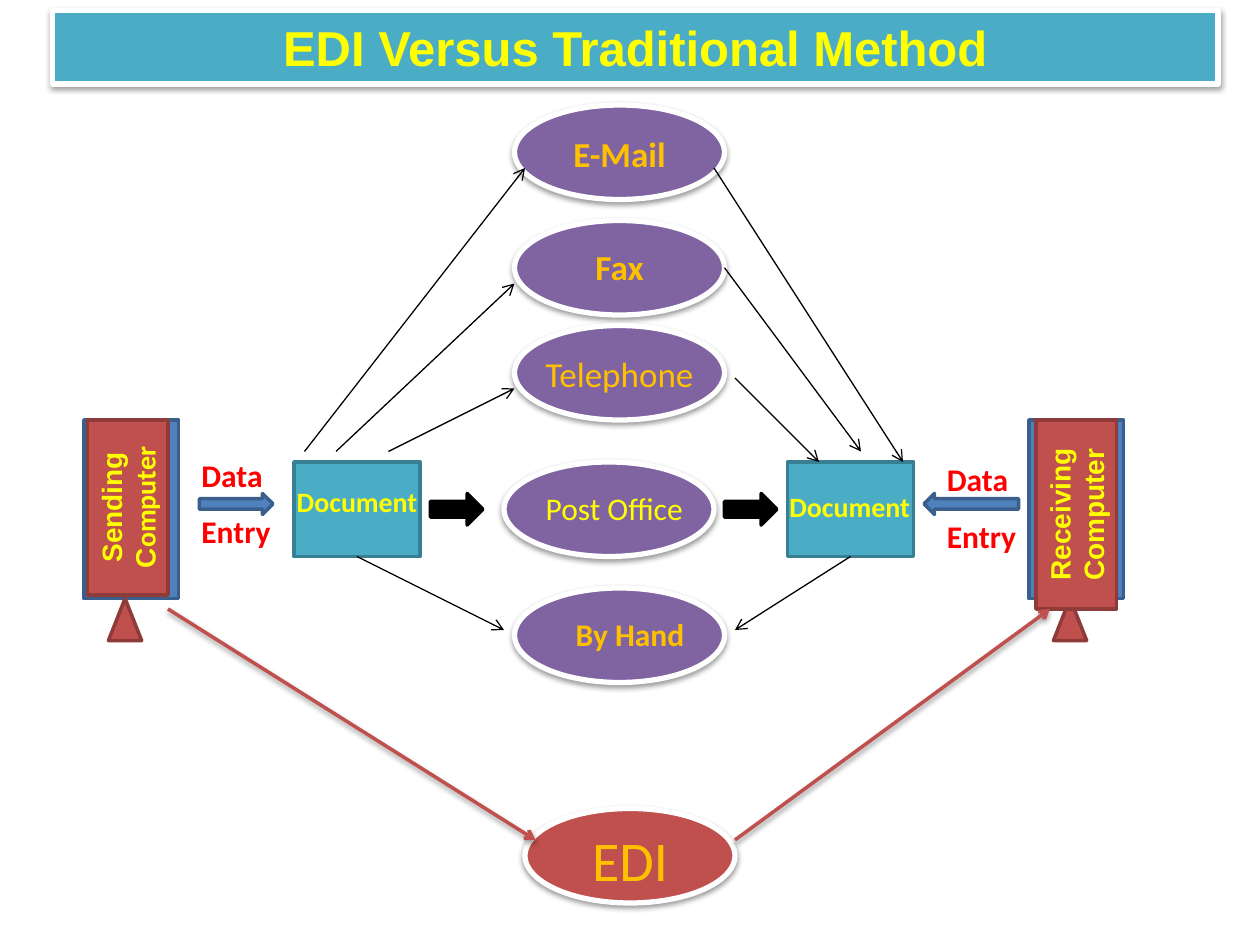
from dataclasses import dataclass
from typing import Optional

from lxml import etree
from pptx import Presentation
from pptx.dml.color import RGBColor
from pptx.enum.shapes import MSO_CONNECTOR, MSO_SHAPE
from pptx.enum.text import MSO_ANCHOR, PP_ALIGN
from pptx.oxml import parse_xml
from pptx.oxml.ns import nsdecls, qn
from pptx.util import Pt

RECTANGLE, OVAL = MSO_SHAPE.RECTANGLE, MSO_SHAPE.OVAL
TRIANGLE = MSO_SHAPE.ISOSCELES_TRIANGLE
RIGHT_ARROW, LEFT_ARROW = MSO_SHAPE.RIGHT_ARROW, MSO_SHAPE.LEFT_ARROW
STRAIGHT = MSO_CONNECTOR.STRAIGHT
MIDDLE = MSO_ANCHOR.MIDDLE
LEFT, CENTER = PP_ALIGN.LEFT, PP_ALIGN.CENTER
BOTTOM_SIDE = 2

COLORS = {
    "teal": "4BACC6", "teal edge": "377F92", "blue": "4F81BD", "blue edge": "3A5F8C",
    "red": "C0504D", "red edge": "8E3B39", "purple": "8064A2", "white": "FFFFFF",
    "black": "000000", "yellow": "FFFF00", "gold": "FFC000", "bright red": "FF0000",
}


@dataclass
class Box:
    kind: int
    left: float
    top: float
    width: float
    height: float
    fill: str
    edge: str
    edge_width: float = 2
    shadow: bool = False
    rotation: float = 0


@dataclass
class Label:
    text: str
    left: float
    top: float
    width: float
    height: float
    size: float
    color: str
    bold: bool = True
    align: int = CENTER
    spacing: float = 1


@dataclass
class Arrow:
    start: tuple[float, float]
    end: tuple[float, float]
    color: str = "black"
    width: float = 0.75
    shadow: bool = False
    source: Optional[str] = None


def rgb(name: str) -> RGBColor:
    return RGBColor.from_string(COLORS[name])


def set_shadow(shape, visible: bool) -> None:
    properties = shape._element.spPr
    for effects in properties.findall(qn("a:effectLst")):
        properties.remove(effects)
    shadow = (
        '<a:outerShdw blurRad="40000" dist="20000" dir="5400000" rotWithShape="0">'
        '<a:srgbClr val="000000"><a:alpha val="38000"/></a:srgbClr></a:outerShdw>'
    )
    properties.append(parse_xml(
        f'<a:effectLst {nsdecls("a")}>{shadow if visible else ""}</a:effectLst>'))


def paint(shape, fill: str, edge: str, edge_width: float, shadow: bool) -> None:
    shape.fill.solid()
    shape.fill.fore_color.rgb = rgb(fill)
    shape.line.color.rgb = rgb(edge)
    shape.line.width = Pt(edge_width)
    set_shadow(shape, shadow)


def write(shape, *texts: tuple[str, str], size: float, color: str, bold: bool = True,
          align: int = CENTER, spacing: float = 1) -> None:
    """Write one paragraph of (text, font name) runs."""
    shape.text_frame.word_wrap = True
    paragraph = shape.text_frame.paragraphs[0]
    paragraph.alignment = align
    paragraph.line_spacing = spacing
    for text, font_name in texts:
        run = paragraph.add_run()
        run.text = text
        run.font.name = font_name
        run.font.size = Pt(size)
        run.font.bold = bold
        run.font.color.rgb = rgb(color)


def add_box(slide, box: Box):
    shape = slide.shapes.add_shape(
        box.kind, Pt(box.left), Pt(box.top), Pt(box.width), Pt(box.height))
    shape.rotation = box.rotation
    paint(shape, box.fill, box.edge, box.edge_width, box.shadow)
    return shape


def add_label(slide, label: Label) -> None:
    shape = slide.shapes.add_textbox(
        Pt(label.left), Pt(label.top), Pt(label.width), Pt(label.height))
    write(shape, (label.text, "Calibri"), size=label.size, color=label.color,
          bold=label.bold, align=label.align, spacing=label.spacing)


def add_arrow(slide, arrow: Arrow, sources: dict) -> None:
    connector = slide.shapes.add_connector(
        STRAIGHT, *(Pt(value) for value in arrow.start + arrow.end))
    if arrow.source:
        connector.begin_connect(sources[arrow.source], BOTTOM_SIDE)
    connector.line.color.rgb = rgb(arrow.color)
    connector.line.width = Pt(arrow.width)
    etree.SubElement(connector.line._get_or_add_ln(), qn("a:tailEnd"), type="arrow")
    set_shadow(connector, arrow.shadow)


def oval(left: float, top: float, fill: str = "purple") -> Box:
    return Box(OVAL, left, top, 120, 54, fill, "white", 3, True)


def computer(left: float, top: float, width: float) -> Box:
    return Box(RECTANGLE, left, top, width, 46, "red", "red edge", rotation=270)


def document(left: float) -> Box:
    return Box(RECTANGLE, left, 264, 72, 54, "teal", "teal edge")


BACKGROUND_BOXES = [
    Box(RECTANGLE, 48, 240, 54, 102, "blue", "blue edge"),
    Box(RECTANGLE, 588, 240, 54, 102, "blue", "blue edge"),
    Box(RIGHT_ARROW, 114, 282, 42, 12, "blue", "blue edge"),
    Box(LEFT_ARROW, 528, 282, 54, 12, "blue", "blue edge"),
    Box(TRIANGLE, 62, 342, 19, 24, "red", "red edge"),
    Box(TRIANGLE, 602, 342, 19, 24, "red", "red edge"),
]
COMPUTERS = [
    (computer(23, 267, 100), [("Sending C", "Arial"), ("omputer", "Calibri")]),
    (computer(561, 271, 108), [("Receiving Computer", "Arial")]),
]
DOCUMENTS = {"sent": document(168), "received": document(450)}
CHANNELS = [
    oval(294, 60), oval(294, 126), oval(294, 186), oval(288, 264), oval(294, 336),
    oval(300, 462, "red"),
    Box(RIGHT_ARROW, 246, 282, 30, 18, "black", "black"),
    Box(RIGHT_ARROW, 414, 282, 30, 18, "black", "black"),
]
ARROWS = [
    Arrow((420, 480), (600, 348), "red", 2, True),
    Arrow((96, 348), (306, 480), "red", 2, True),
    Arrow((204, 318), (288, 360), source="sent"),
    Arrow((486, 318), (420, 360), source="received"),
    Arrow((222, 258), (294, 222)),
    Arrow((420, 216), (468, 264)),
    Arrow((192, 258), (294, 162)),
    Arrow((414, 153), (492, 258)),
    Arrow((174, 258), (300, 96)),
    Arrow((408, 96), (516, 264)),
]
LABELS = [
    Label("Document", 162, 273.5, 84, 27, 16, "yellow"),
    Label("Document", 444, 276, 96, 27, 16, "yellow", align=LEFT),
    Label("Data Entry", 108, 246, 54, 69, 18, "bright red", align=LEFT, spacing=1.5),
    Label("Data Entry", 534, 248.5, 54, 69, 18, "bright red", align=LEFT, spacing=1.5),
    Label("E-Mail", 312, 72, 84, 32, 20, "gold"),
    Label("Fax", 312, 137, 84, 32, 20, "gold"),
    Label("Telephone", 300, 198, 108, 32, 20, "gold", bold=False),
    Label("Post Office", 294, 276, 114, 30, 18, "yellow", bold=False),
    Label("By Hand", 312, 348, 96, 30, 18, "gold"),
    Label("EDI", 318, 468, 84, 46, 32, "gold", bold=False),
]


def main() -> None:
    presentation = Presentation()
    presentation.slide_width, presentation.slide_height = Pt(720), Pt(540)
    slide = presentation.slides.add_slide(presentation.slide_layouts[0])

    # Title banner
    subtitle = slide.placeholders[1]._element
    subtitle.getparent().remove(subtitle)
    title = slide.shapes.title
    title.left, title.top, title.width, title.height = Pt(30), Pt(6), Pt(666), Pt(42)
    title.text_frame.vertical_anchor = MIDDLE
    paint(title, "teal", "white", 3, True)
    write(title, ("EDI Versus Traditional Method", "Arial"), size=28, color="yellow")

    # Computers, documents and channels
    for box in BACKGROUND_BOXES:
        add_box(slide, box)
    for box, texts in COMPUTERS:
        write(add_box(slide, box), *texts, size=16, color="yellow")
    documents = {name: add_box(slide, box) for name, box in DOCUMENTS.items()}
    for box in CHANNELS:
        add_box(slide, box)

    # Routes and labels
    for arrow in ARROWS:
        add_arrow(slide, arrow, documents)
    for label in LABELS:
        add_label(slide, label)

    presentation.save("out.pptx")


if __name__ == "__main__":
    main()
